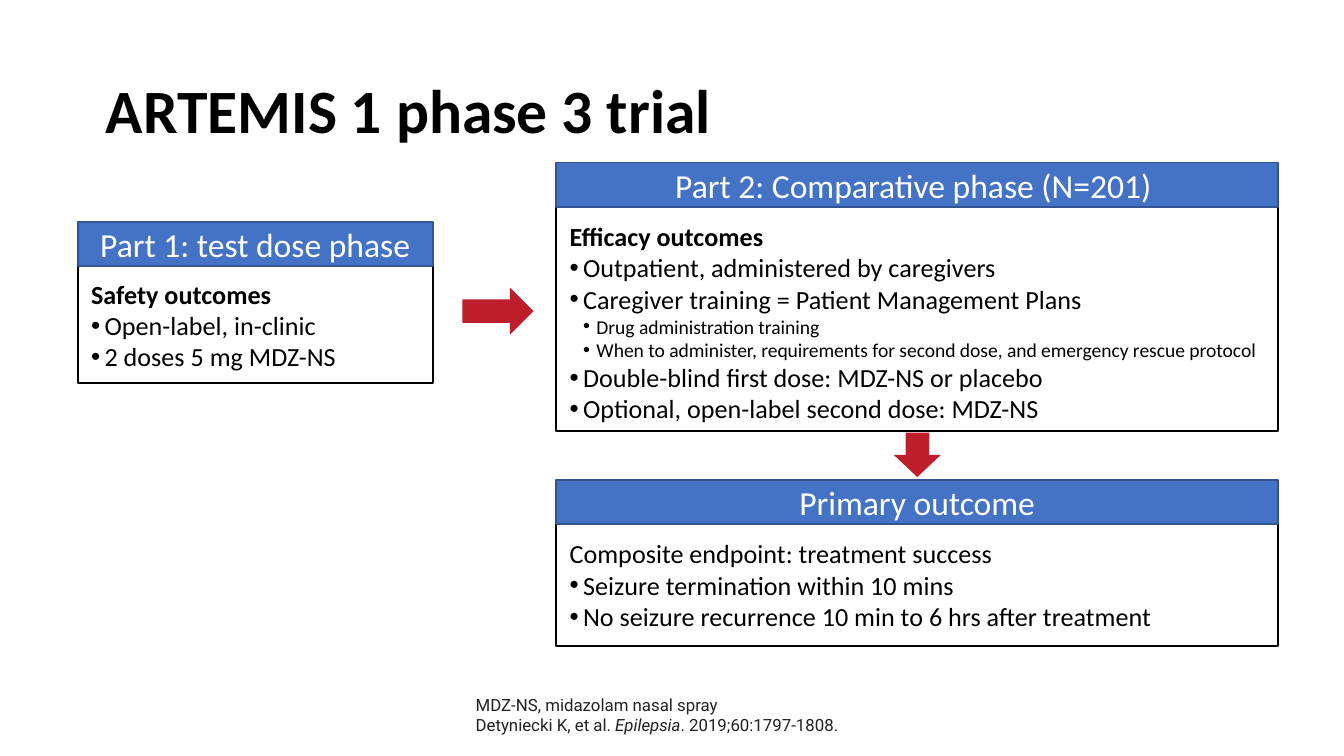
from lxml import etree
from pptx import Presentation
from pptx import util as u
from pptx.dml.color import RGBColor
from pptx.enum import shapes, text
from pptx.oxml import ns

BLACK = RGBColor(0x00, 0x00, 0x00)
WHITE = RGBColor(0xFF, 0xFF, 0xFF)
BLUE = RGBColor(0x44, 0x72, 0xC4)
DARK_BLUE = RGBColor(0x32, 0x54, 0x91)
RED = RGBColor(0xBE, 0x1E, 0x2C)
GREY = RGBColor(0x21, 0x21, 0x21)

SLIDE_WIDTH = 10
LEFT_X, LEFT_WIDTH = 0.58, 2.64
RIGHT_X, RIGHT_WIDTH = 4.14, 5.37
HEADER_HEIGHT = 0.33
BULLET_INDENT = 0.1

presentation = Presentation()
presentation.slide_width = u.Inches(SLIDE_WIDTH)
presentation.slide_height = u.Inches(SLIDE_WIDTH * 9 / 16)
slide = presentation.slides.add_slide(presentation.slide_layouts[6])


def add_box(kind, left, top, width, height, fill=None, line=None):
    """Add a preset shape; no fill or line is drawn unless a colour is given."""
    shape = slide.shapes.add_shape(
        kind, u.Inches(left), u.Inches(top), u.Inches(width), u.Inches(height))
    shape.shadow.inherit = False
    if fill is None:
        shape.fill.background()
    else:
        shape.fill.solid()
        shape.fill.fore_color.rgb = fill
    if line is None:
        shape.line.fill.background()
    else:
        shape.line.color.rgb = line
        shape.line.width = u.Pt(1)
    return shape


def write(shape, paragraphs, anchor, color, font="Calibri", align=text.PP_ALIGN.LEFT):
    """Fill a shape from (bullet level, size, runs); a run is (words, style)."""
    frame = shape.text_frame
    frame.word_wrap = True
    frame.vertical_anchor = anchor
    for index, (level, size, runs) in enumerate(paragraphs):
        paragraph = frame.add_paragraph() if index else frame.paragraphs[0]
        paragraph.alignment = align
        if level:
            paragraph.level = level - 1
            properties = paragraph._p.get_or_add_pPr()
            properties.set("marL", str(u.Inches(BULLET_INDENT * level)))
            properties.set("indent", str(u.Inches(-BULLET_INDENT)))
            etree.SubElement(properties, ns.qn("a:buFont"), typeface="Arial")
            etree.SubElement(properties, ns.qn("a:buChar"), char="•")
        for words, style in runs:
            run = paragraph.add_run()
            run.text = words
            run.font.name = font
            run.font.size = u.Pt(size)
            run.font.color.rgb = color
            run.font.bold = style == "bold"
            run.font.italic = style == "italic"


RECTANGLE = shapes.MSO_SHAPE.RECTANGLE
TOP, MIDDLE, BOTTOM = (text.MSO_ANCHOR.TOP, text.MSO_ANCHOR.MIDDLE,
                       text.MSO_ANCHOR.BOTTOM)

# Title and source note
title = slide.shapes.add_textbox(
    u.Inches(0.69), u.Inches(0.3), u.Inches(8.62), u.Inches(1.09))
write(title, [(0, 33, [("ARTEMIS 1 phase 3 trial", "bold")])], MIDDLE, BLACK)
title.text_frame.paragraphs[0].line_spacing = 0.9

source_note = slide.shapes.add_textbox(
    u.Inches(3.44), u.Inches(4.96), u.Inches(5.88), u.Inches(0.56))
write(source_note, [
    (0, 9, [("MDZ-NS, midazolam nasal spray", None)]),
    (0, 9, [("Detyniecki K, et al. ", None), ("Epilepsia", "italic"),
            (". 2019;60:1797-1808.", None)]),
], BOTTOM, GREY, font="Roboto")

# Outlined bodies of the three panels: left, top, width, height
for bounds in [
    (LEFT_X, 1.98, LEFT_WIDTH, 0.87),
    (RIGHT_X, 1.54, RIGHT_WIDTH, 1.67),
]:
    add_box(RECTANGLE, *bounds, line=BLACK)
outcome_body = add_box(RECTANGLE, RIGHT_X, 3.89, RIGHT_WIDTH, 0.92, line=BLACK)
write(outcome_body, [
    (0, 14, [("Composite endpoint: treatment success", None)]),
    (1, 14, [("Seizure termination within 10 mins", None)]),
    (1, 14, [("No seizure recurrence 10 min to 6 hrs after treatment", None)]),
], MIDDLE, BLACK)

# Panel headers
for heading, left, top, width in [
    ("Part 1: test dose phase", LEFT_X, 1.65, LEFT_WIDTH),
    ("Part 2: Comparative phase (N=201) ", RIGHT_X, 1.21, RIGHT_WIDTH),
    ("Primary outcome", RIGHT_X, 3.57, RIGHT_WIDTH),
]:
    header = add_box(RECTANGLE, left, top, width, HEADER_HEIGHT, BLUE, DARK_BLUE)
    write(header, [(0, 18, [(heading, None)])], MIDDLE, WHITE,
          align=text.PP_ALIGN.CENTER)

# Outcome lists of the two parts: bullet level and words
part_lists = [
    ((LEFT_X, 2.02, LEFT_WIDTH, 0.82), "Safety outcomes", [
        (1, "Open-label, in-clinic"),
        (1, "2 doses 5 mg MDZ-NS"),
    ]),
    ((RIGHT_X, 1.59, 6, 1.62), "Efficacy outcomes", [
        (1, "Outpatient, administered by caregivers"),
        (1, "Caregiver training = Patient Management Plans"),
        (2, "Drug administration training"),
        (2, "When to administer, requirements for second dose, "
            "and emergency rescue protocol"),
        (1, "Double-blind first dose: MDZ-NS or placebo"),
        (1, "Optional, open-label second dose: MDZ-NS"),
    ]),
]
for bounds, heading, items in part_lists:
    outcome_list = slide.shapes.add_textbox(*[u.Inches(value) for value in bounds])
    paragraphs = [(0, 14, [(heading, "bold")])]
    for level, words in items:
        paragraphs.append((level, 14 if level == 1 else 10.5, [(words, None)]))
    write(outcome_list, paragraphs, TOP, BLACK)

# Flow arrows
add_box(shapes.MSO_SHAPE.RIGHT_ARROW, 3.44, 2.14, 0.53, 0.35, fill=RED)
down_arrow = add_box(shapes.MSO_SHAPE.RIGHT_ARROW, 6.66, 3.21, 0.33, 0.35, fill=RED)
down_arrow.rotation = 90

presentation.save("out.pptx")
